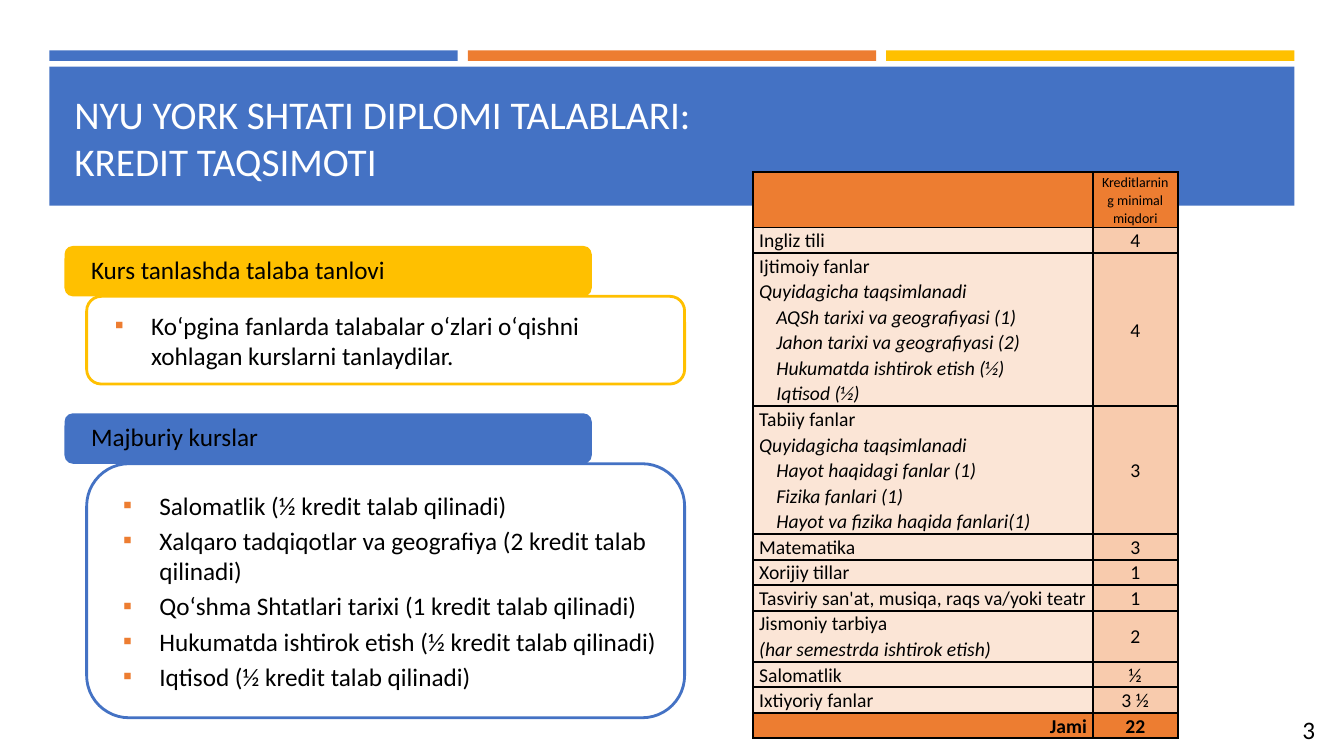
from lxml.etree import SubElement
from pptx import Presentation
from pptx.dml.color import RGBColor
from pptx.enum.shapes import MSO_SHAPE
from pptx.enum.text import MSO_ANCHOR, PP_ALIGN
from pptx.oxml.ns import qn
from pptx.util import Inches, Pt

TITLE = "NYU YORK SHTATI DIPLOMI TALABLARI:\nKREDIT TAQSIMOTI"
NUMBER = "3"
GROUPS = [
    ("Kurs tanlashda talaba tanlovi", "gold", 32.53, 11.6, [
        "Koʻpgina fanlarda talabalar oʻzlari oʻqishni xohlagan kurslarni tanlaydilar.",
    ]),
    ("Majburiy kurslar", "blue", 54.67, 33.6, [
        "Salomatlik (½ kredit talab qilinadi)",
        "Xalqaro tadqiqotlar va geografiya (2 kredit talab qilinadi)",
        "Qoʻshma Shtatlari tarixi (1 kredit talab qilinadi)",
        "Hukumatda ishtirok etish (½ kredit talab qilinadi)",
        "Iqtisod (½ kredit talab qilinadi)",
    ]),
]
HEAD = "Kreditlarning minimal miqdori"
CREDITS = [
    (["Ingliz tili"], "4"),
    (["Ijtimoiy fanlar", "Quyidagicha taqsimlanadi",
      "AQSh tarixi va geografiyasi (1)", "Jahon tarixi va geografiyasi (2)",
      "Hukumatda ishtirok etish (½)", "Iqtisod (½)"], "4"),
    (["Tabiiy fanlar", "Quyidagicha taqsimlanadi", "Hayot haqidagi fanlar (1)",
      "Fizika fanlari (1)", "Hayot va fizika haqida fanlari(1)"], "3"),
    (["Matematika"], "3"),
    (["Xorijiy tillar"], "1"),
    (["Tasviriy san'at, musiqa, raqs va/yoki teatr"], "1"),
    (["Jismoniy tarbiya", "(har semestrda ishtirok etish)"], "2"),
    (["Salomatlik"], "½"),
    (["Ixtiyoriy fanlar"], "3 ½"),
]
TOTAL = ("Jami", "22")

COLORS = {"blue": "4472C4", "orange": "ED7D31", "gold": "FFC000", "black": "000000",
          "white": "FFFFFF", "pale": "FBE5D6", "peach": "F8CBAD"}
FONT = "Calibri"
WIDE, HIGH = Inches(13.33), Inches(7.5)
LEFT, BAR, STEP = 3.68, 30.38, 31.13
TAB = 6.67
COLS = (25.28, 6.3)
TOP, LINE = 7.3, 3.38

deck = Presentation()
deck.slide_width, deck.slide_height = WIDE, HIGH
slide = deck.slides.add_slide(deck.slide_layouts[6])


def color(name):
    return RGBColor.from_string(COLORS[name])


def place(left, top, width, height):
    return (int(WIDE * left / 100), int(HIGH * top / 100),
            int(WIDE * width / 100), int(HIGH * height / 100))


def write(frame, lines, size=18, ink="black", align=PP_ALIGN.LEFT, bold=False,
          style=None, indent=None, hang=0, space=None, gap=0, bullet=None):
    frame.word_wrap = True
    for i, line in enumerate(lines):
        para = frame.paragraphs[0] if i == 0 else frame.add_paragraph()
        para.text = line
        para.alignment = align
        para.line_spacing = space
        if i:
            para.space_before = Pt(gap)
        props = para._p.get_or_add_pPr()
        props.set("marL", str(Inches(indent(i) if indent else 0)))
        props.set("indent", str(Inches(-hang)))
        if bullet:
            tint = SubElement(props, qn("a:buClr"))
            SubElement(tint, qn("a:srgbClr"), val=COLORS["orange"])
            SubElement(props, qn("a:buFont"), typeface=FONT)
            SubElement(props, qn("a:buChar"), char=bullet)
        for run in para.runs:
            run.font.name, run.font.size = FONT, Pt(size)
            run.font.bold, run.font.italic = bold, bool(style and style(i))
            run.font.color.rgb = color(ink)


def block(area, fill=None, edge=None, kind=MSO_SHAPE.RECTANGLE):
    shape = slide.shapes.add_shape(kind, *place(*area))
    shape.shadow.inherit = False
    if fill:
        shape.fill.solid()
        shape.fill.fore_color.rgb = color(fill)
    else:
        shape.fill.background()
    if edge:
        shape.line.color.rgb = color(edge)
        shape.line.width = Pt(2)
    else:
        shape.line.fill.background()
    shape.text_frame.vertical_anchor = MSO_ANCHOR.MIDDLE
    return shape


def label(area, lines, anchor=MSO_ANCHOR.TOP, **style):
    frame = slide.shapes.add_textbox(*place(*area)).text_frame
    frame.vertical_anchor = anchor
    write(frame, lines, **style)


def cell_text(cell, lines, fill, **style):
    cell.margin_left = cell.margin_right = Inches(0.06)
    cell.margin_top = cell.margin_bottom = 0
    props = cell._tc.get_or_add_tcPr()
    for side in ("lnL", "lnR", "lnT", "lnB"):
        edge = SubElement(props, qn("a:" + side), w=str(Pt(1.5)))
        paint = SubElement(edge, qn("a:solidFill"))
        SubElement(paint, qn("a:srgbClr"), val=COLORS["black"])
    cell.fill.solid()
    cell.fill.fore_color.rgb = color(fill)
    write(cell.text_frame, lines, space=1.07, **style)


def credit_table():
    sizes = [TOP] + [LINE * len(names) for names, _ in CREDITS] + [LINE]
    table = slide.shapes.add_table(
        len(sizes), 2, *place(56.04, 22.8, sum(COLS), sum(sizes))).table
    table.first_row = table.horz_banding = False
    for col, share in zip(table.columns, COLS):
        col.width = int(WIDE * share / 100)
    for row, share in zip(table.rows, sizes):
        row.height = int(HIGH * share / 100)
        row.cells[1].vertical_anchor = MSO_ANCHOR.MIDDLE
    mid = PP_ALIGN.CENTER
    cell_text(table.cell(0, 0), [], "orange")
    cell_text(table.cell(0, 1), [HEAD], "orange", size=10, align=mid)
    for r, (names, count) in enumerate(CREDITS, 1):
        cell_text(table.cell(r, 0), names, "pale", size=14,
                  style=lambda i: i > 0, indent=lambda i: 0.17 if i > 1 else 0)
        cell_text(table.cell(r, 1), [count], "peach", size=14, align=mid)
    last = len(sizes) - 1
    for c, align in enumerate((PP_ALIGN.RIGHT, mid)):
        cell_text(table.cell(last, c), [TOTAL[c]], "orange", size=14, bold=True, align=align)


def main():
    for i, name in enumerate(("blue", "orange", "gold")):
        block((LEFT + i * STEP, TAB, BAR, 1.4), name)
    label((94.75, 93.87, 5.25, 5.33), [NUMBER], align=PP_ALIGN.CENTER)
    block((LEFT, 8.8, 2 * STEP + BAR, 18.4), "blue")
    label((4.8, 10.67, 90.47, 14.4), [TITLE], MSO_ANCHOR.BOTTOM, size=28, ink="white")
    soft = MSO_SHAPE.ROUNDED_RECTANGLE
    for name, hue, top, height, items in GROUPS:
        tab = block((4.8, top, 39.23, TAB), hue, kind=soft)
        write(tab.text_frame, [name], indent=lambda i: 0.14, space=0.9)
        box = block((6.45, top + TAB, 44.49, height), edge=hue, kind=soft)
        write(box.text_frame, items, indent=lambda i: 0.5, hang=0.36, gap=3.6, bullet="▪")
    credit_table()
    deck.save("out.pptx")


if __name__ == "__main__":
    main()
